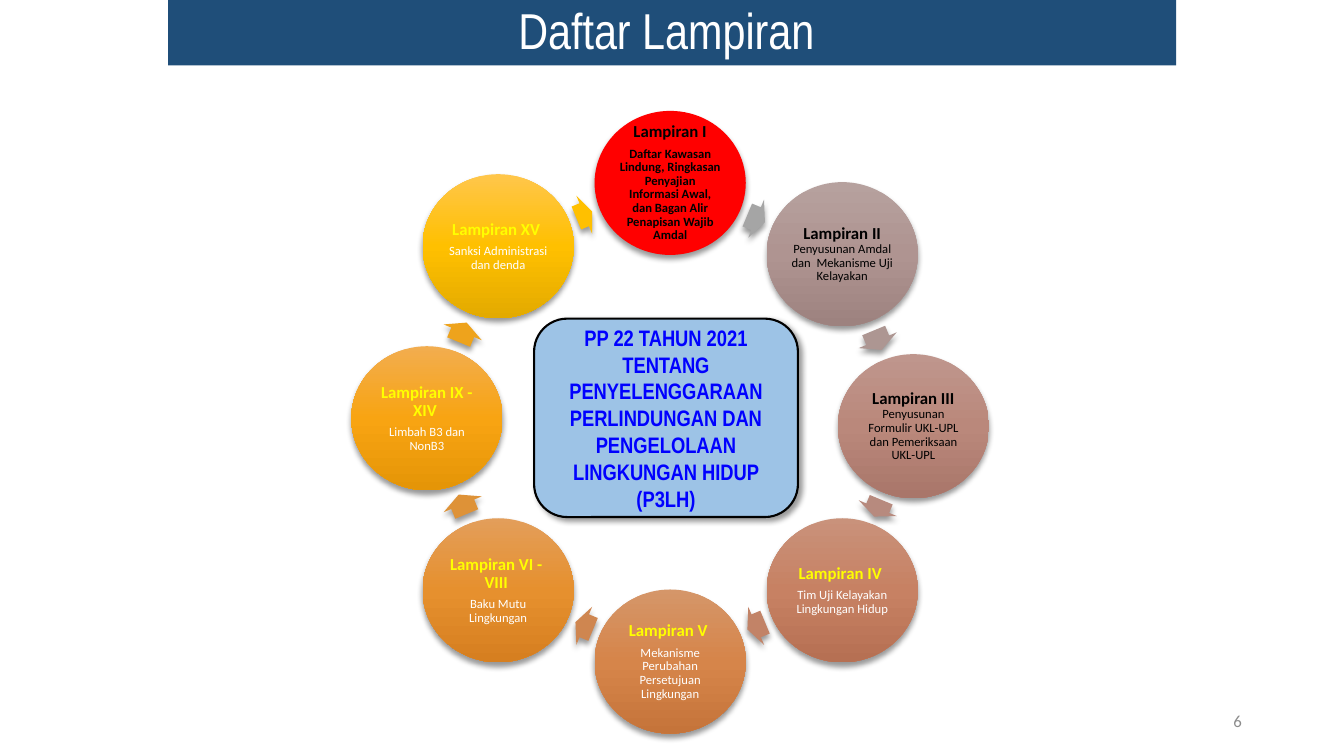
import copy
import math

import pptx
import pptx.util
from pptx.dml.color import RGBColor
from pptx.enum.shapes import MSO_SHAPE
from pptx.enum.text import MSO_ANCHOR, PP_ALIGN
from pptx.oxml import parse_xml
from pptx.oxml.ns import nsdecls, qn
from pptx.util import Cm, Pt

COLORS = {
    "black": "000000", "white": "FFFFFF", "yellow": "FFFF00", "blue": "0000FF",
    "banner": "1F4E79", "center": "9DC3E6", "number": "8C8C8C",
}

# heading, description, circle fill (one colour or three stops), arrow colour, arrow width
ANNEXES = [
    ("Lampiran I", "Daftar Kawasan Lindung, Ringkasan Penyajian Informasi Awal, "
     "dan Bagan Alir Penapisan Wajib Amdal", ["FF0000"], "A5A5A5", 0.48),
    ("Lampiran II ", "Penyusunan Amdal dan  Mekanisme Uji Kelayakan",
     ["B6A19E", "AF9491", "9D827F"], "AD9692", 0.53),
    ("Lampiran III ", "Penyusunan Formulir UKL-UPL dan Pemeriksaan UKL-UPL",
     ["BF968D", "BA887B", "A9766A"], "B78A7E", 0.46),
    ("Lampiran IV ", "Tim Uji Kelayakan Lingkungan Hidup",
     ["C9927B", "C78163", "B67053"], "C28367", 0.48),
    ("Lampiran V ", "Mekanisme Perubahan Persetujuan Lingkungan",
     ["D59669", "D6854A", "C5743A"], "CF8650", 0.48),
    ("Lampiran VI -  VIII ", "Baku Mutu Lingkungan",
     ["E39E5A", "E6902E", "D67F20"], "DE9237", 0.53),
    ("Lampiran IX - XIV ", "Limbah B3 dan NonB3",
     ["F2AD4F", "F8A412", "E59507"], "EEA31C", 0.53),
    ("Lampiran XV ", "Sanksi Administrasi dan denda",
     ["FFC64B", "FFC000", "E3AA00"], "FFC000", 0.43),
]

CENTER_X, CENTER_Y = 16.89, 10.54
CIRCLE_RADIUS, ARROW_RADIUS = 6.13, 5.66
CIRCLE_WIDTH, CIRCLE_HEIGHT, ARROW_HEIGHT = 3.81, 3.63, 1.04
# the first three circles sit a little lower than the ring
DROPS = [0.2] * 3 + [0] * 5


def add_block(kind, left, top, width, height, fills, shadow_angle=None):
    """Add a borderless shape, solid or with a vertical gradient, and an optional shadow."""
    block = page.shapes.add_shape(kind, Cm(left), Cm(top), Cm(width), Cm(height))
    if len(fills) == 1:
        block.fill.solid()
        block.fill.fore_color.rgb = RGBColor.from_string(fills[0])
    else:
        block.fill.gradient()
        block.fill.gradient_angle = 270
        stop_list = block._element.spPr.find(".//" + qn("a:gsLst"))
        stop_list.insert(1, copy.deepcopy(stop_list[0]))
        for stop, position, color in zip(block.fill.gradient_stops, (0, 0.5, 1), fills):
            stop.position = position
            stop.color.rgb = RGBColor.from_string(color)
    block.line.fill.background()
    block.shadow.inherit = False
    if shadow_angle is not None:
        block._element.spPr.find(qn("a:effectLst")).append(parse_xml(
            f'<a:outerShdw {nsdecls("a")} blurRad="{Pt(4)}" dist="{Pt(3)}" '
            f'dir="{shadow_angle * 60000}" rotWithShape="0"><a:srgbClr val="000000">'
            '<a:alpha val="40000"/></a:srgbClr></a:outerShdw>'))
    return block


def style_text(target, size, color, bold=False, name="Calibri"):
    """Set the font of a paragraph or a run."""
    target.font.name = name
    target.font.size = Pt(size)
    target.font.bold = bold
    target.font.color.rgb = RGBColor.from_string(COLORS[color])


deck = pptx.Presentation()
deck.slide_width, deck.slide_height = Cm(33.87), Cm(19.05)
page = deck.slides.add_slide(deck.slide_layouts[6])

# Ring of annexes
for index, (heading, description, fills, arrow_color, arrow_width) in enumerate(ANNEXES):
    angle = math.radians(45 * index)
    circle = add_block(
        MSO_SHAPE.OVAL,
        CENTER_X + CIRCLE_RADIUS * math.sin(angle) - CIRCLE_WIDTH / 2,
        CENTER_Y - CIRCLE_RADIUS * math.cos(angle) + DROPS[index] - CIRCLE_HEIGHT / 2,
        CIRCLE_WIDTH, CIRCLE_HEIGHT, fills, 90)
    frame = circle.text_frame
    frame.word_wrap = True
    frame.vertical_anchor = MSO_ANCHOR.MIDDLE
    frame.margin_left = frame.margin_right = frame.margin_top = frame.margin_bottom = Cm(0.05)
    heading_para = frame.paragraphs[0]
    # annexes II and III keep heading and description in one paragraph
    body_para = heading_para if index in (1, 2) else frame.add_paragraph()
    heading_span = heading_para.add_run()
    heading_span.text = heading
    style_text(heading_span, 12, "black" if index < 3 else "yellow", True)
    body_span = body_para.add_run()
    body_span.text = description
    style_text(body_span, 9, "black" if index < 3 else "white", index == 0)
    for para in frame.paragraphs:
        para.alignment = PP_ALIGN.CENTER
        para.line_spacing = 0.9
        para.space_after = Pt(4.2)

    arrow_angle = angle + math.radians(22.5)
    drop = (DROPS[index] + DROPS[(index + 1) % len(DROPS)]) / 2
    arrow = add_block(
        MSO_SHAPE.RIGHT_ARROW,
        CENTER_X + ARROW_RADIUS * math.sin(arrow_angle) - arrow_width / 2,
        CENTER_Y - ARROW_RADIUS * math.cos(arrow_angle) + drop - ARROW_HEIGHT / 2,
        arrow_width, ARROW_HEIGHT, [arrow_color], 90)
    arrow.rotation = 45 * index + 22.5
    arrow.adjustments[0] = 0.6
    arrow.adjustments[1] = 0.5

# Page number
number_box = page.shapes.add_textbox(Cm(23.93), Cm(17.65), Cm(7.62), Cm(1.02))
number_box.text_frame.word_wrap = True
number_box.text_frame.vertical_anchor = MSO_ANCHOR.MIDDLE
number_para = number_box.text_frame.paragraphs[0]
number_para.text = "6"
number_para.alignment = PP_ALIGN.RIGHT
style_text(number_para, 12, "number")

# Title banner and central regulation
banner = add_block(MSO_SHAPE.RECTANGLE, 4.24, 0, 25.4, 1.65, [COLORS["banner"]])
regulation = add_block(MSO_SHAPE.ROUNDED_RECTANGLE, 13.46, 8.03, 6.65, 5,
                       [COLORS["center"]], 45)
regulation.line.color.rgb = RGBColor.from_string(COLORS["black"])
regulation.line.width = Pt(1.5)
for block, text, size, color, bold in [
    (banner, "Daftar Lampiran ", 36, "white", False),
    (regulation, "PP 22 TAHUN 2021 TENTANG PENYELENGGARAAN PERLINDUNGAN DAN "
     "PENGELOLAAN LINGKUNGAN HIDUP (P3LH)", 16, "blue", True),
]:
    block.text_frame.word_wrap = True
    block.text_frame.vertical_anchor = MSO_ANCHOR.MIDDLE
    para = block.text_frame.paragraphs[0]
    para.text = text
    para.alignment = PP_ALIGN.CENTER
    style_text(para, size, color, bold, "Arial Narrow")
banner.text_frame.paragraphs[0].line_spacing = 0.9

deck.save("out.pptx")
